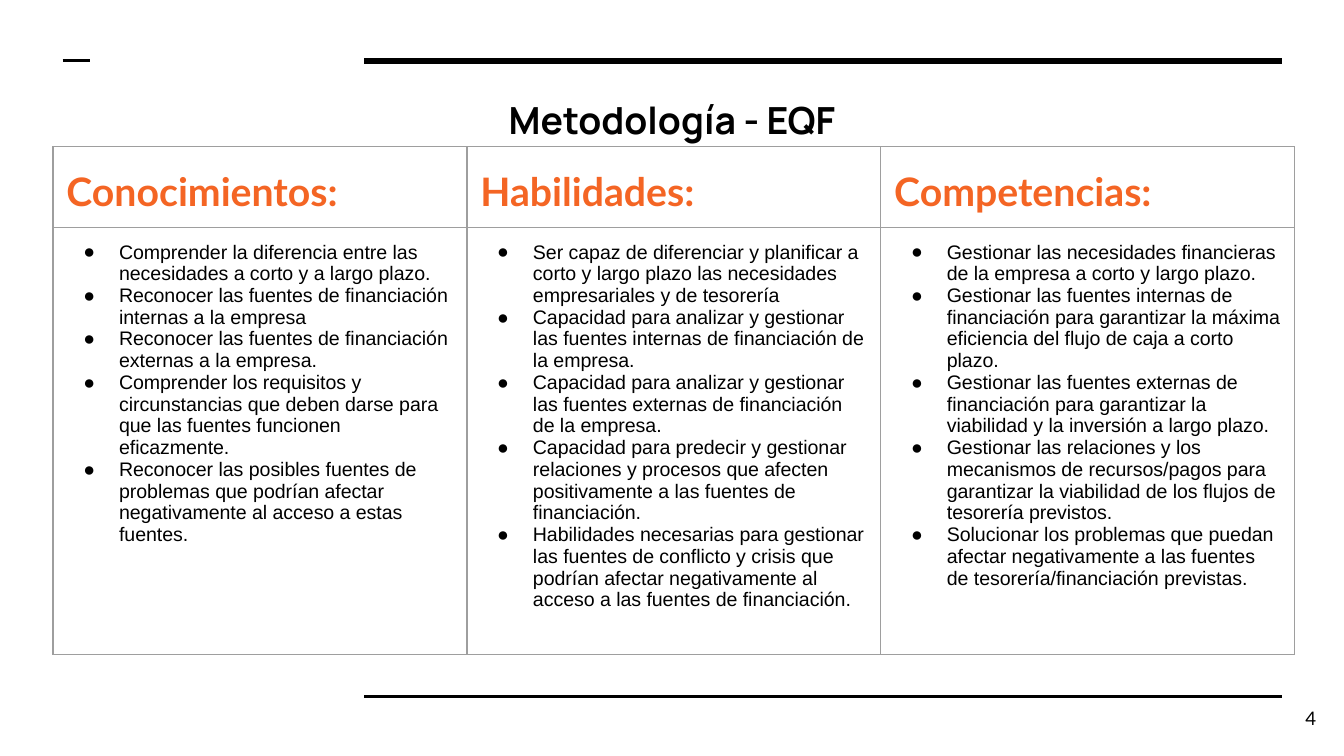
from lxml.etree import SubElement
from pptx import Presentation
from pptx.dml.color import RGBColor
from pptx.enum.shapes import MSO_CONNECTOR
from pptx.enum.text import MSO_ANCHOR, PP_ALIGN
from pptx.oxml.ns import qn
from pptx.util import Pt

# Content
TITLE = "Metodología - EQF"
PAGE_NUMBER = "4"
COLUMNS = [
    ("Conocimientos:", [
        "Comprender la diferencia entre las necesidades a corto y a largo plazo.",
        "Reconocer las fuentes de financiación internas a la empresa",
        "Reconocer las fuentes de financiación externas a la empresa.",
        "Comprender los requisitos y circunstancias que deben darse para que las fuentes funcionen eficazmente.",
        "Reconocer las posibles fuentes de problemas que podrían afectar negativamente al acceso a estas fuentes.",
    ]),
    ("Habilidades:", [
        "Ser capaz de diferenciar y planificar a corto y largo plazo las necesidades empresariales y de tesorería",
        "Capacidad para analizar y gestionar las fuentes internas de financiación de la empresa.",
        "Capacidad para analizar y gestionar las fuentes externas de financiación de la empresa.",
        "Capacidad para predecir y gestionar relaciones y procesos que afecten positivamente a las fuentes de financiación.",
        "Habilidades necesarias para gestionar las fuentes de conflicto y crisis que podrían afectar negativamente al acceso a las fuentes de financiación.",
    ]),
    ("Competencias:", [
        "Gestionar las necesidades financieras de la empresa a corto y largo plazo.",
        "Gestionar las fuentes internas de financiación para garantizar la máxima eficiencia del flujo de caja a corto plazo.",
        "Gestionar las fuentes externas de financiación para garantizar la viabilidad y la inversión a largo plazo.",
        "Gestionar las relaciones y los mecanismos de recursos/pagos para garantizar la viabilidad de los flujos de tesorería previstos.",
        "Solucionar los problemas que puedan afectar negativamente a las fuentes de tesorería/financiación previstas.",
    ]),
]

# Format
COLORS = {"ink": "000000", "accent": "F46524", "grid": "9E9E9E", "paper": "FFFFFF"}
FONTS = {
    "title": {"name": "Manrope", "size": Pt(20), "bold": True},
    "heading": {"name": "Lato", "size": Pt(21), "bold": True},
    "item": {"name": "Arial", "size": Pt(10.5), "bold": False},
    "page": {"name": "Lato", "size": Pt(10), "bold": False},
}
INSET = Pt(7.2)
MARGINS = {f"margin_{side}": INSET for side in ("left", "top", "right", "bottom")}
RULES = [  # left, right, y, weight
    (195.2, 687, 32.6, 3),
    (195.2, 687, 373, 1.5),
    (33.6, 48, 32.6, 1.5),
]
TABLE_LEFT, TABLE_TOP, COLUMN_WIDTH = 28.4, 78.7, 221.75
ROW_HEIGHTS = [43, 216.5]


def set_all(target, values):
    for name, value in values.items():
        setattr(target, name, value)


def write(paragraph, text, style, color="ink"):
    run = paragraph.add_run()
    run.text = text
    set_all(run.font, FONTS[style])
    run.font.color.rgb = RGBColor.from_string(COLORS[color])


def add_label(box, text, style, align, anchor):
    frame = slide.shapes.add_textbox(*map(Pt, box)).text_frame
    set_all(frame, {**MARGINS, "word_wrap": True, "vertical_anchor": anchor})
    frame.paragraphs[0].alignment = align
    write(frame.paragraphs[0], text, style)


def add_bullet(paragraph):
    props = paragraph._p.get_or_add_pPr()
    props.set("marL", str(Pt(28.2)))
    props.set("indent", str(Pt(-19.2)))
    bullet_color = SubElement(props, qn("a:buClr"))
    SubElement(bullet_color, qn("a:srgbClr"), val=COLORS["ink"])
    SubElement(props, qn("a:buFont"), typeface="Arial")
    SubElement(props, qn("a:buChar"), char="●")


def style_cell(cell):
    set_all(cell, MARGINS)
    props = cell._tc.get_or_add_tcPr()
    for side in ("lnL", "lnR", "lnT", "lnB"):
        border = SubElement(props, qn(f"a:{side}"), w=str(Pt(0.75)))
        fill = SubElement(border, qn("a:solidFill"))
        SubElement(fill, qn("a:srgbClr"), val=COLORS["grid"])
    cell.fill.background()


presentation = Presentation()
set_all(presentation, {"slide_width": Pt(720), "slide_height": Pt(405)})
slide = presentation.slides.add_slide(presentation.slide_layouts[6])
slide.background.fill.solid()
slide.background.fill.fore_color.rgb = RGBColor.from_string(COLORS["paper"])

# Rules at the top and bottom
for left, right, y, weight in RULES:
    rule = slide.shapes.add_connector(MSO_CONNECTOR.STRAIGHT, Pt(left), Pt(y), Pt(right), Pt(y))
    rule.line.width = Pt(weight)
    rule.line.color.rgb = RGBColor.from_string(COLORS["ink"])
    SubElement(rule._element.spPr, qn("a:effectLst"))

# Title
add_label((101.5, 44.6, 517, 49.7), TITLE, "title", PP_ALIGN.CENTER, MSO_ANCHOR.TOP)

# Table of learning outcomes
outcomes = slide.shapes.add_table(
    len(ROW_HEIGHTS), len(COLUMNS), Pt(TABLE_LEFT), Pt(TABLE_TOP),
    Pt(COLUMN_WIDTH * len(COLUMNS)), Pt(sum(ROW_HEIGHTS))).table
set_all(outcomes, {"first_row": False, "horz_banding": False})
for row, height in zip(outcomes.rows, ROW_HEIGHTS):
    row.height = Pt(height)
for index, (heading, items) in enumerate(COLUMNS):
    outcomes.columns[index].width = Pt(COLUMN_WIDTH)
    heading_cell, items_cell = outcomes.cell(0, index), outcomes.cell(1, index)
    for cell in (heading_cell, items_cell):
        style_cell(cell)
    heading_line = heading_cell.text_frame.paragraphs[0]
    heading_line.line_spacing = 1.15
    write(heading_line, heading, "heading", "accent")
    frame = items_cell.text_frame
    for number, item in enumerate(items):
        paragraph = frame.add_paragraph() if number else frame.paragraphs[0]
        add_bullet(paragraph)
        write(paragraph, item, "item")

# Page number
add_label((669, 369.4, 43.2, 31), PAGE_NUMBER, "page", PP_ALIGN.RIGHT, MSO_ANCHOR.MIDDLE)

presentation.save("out.pptx")
